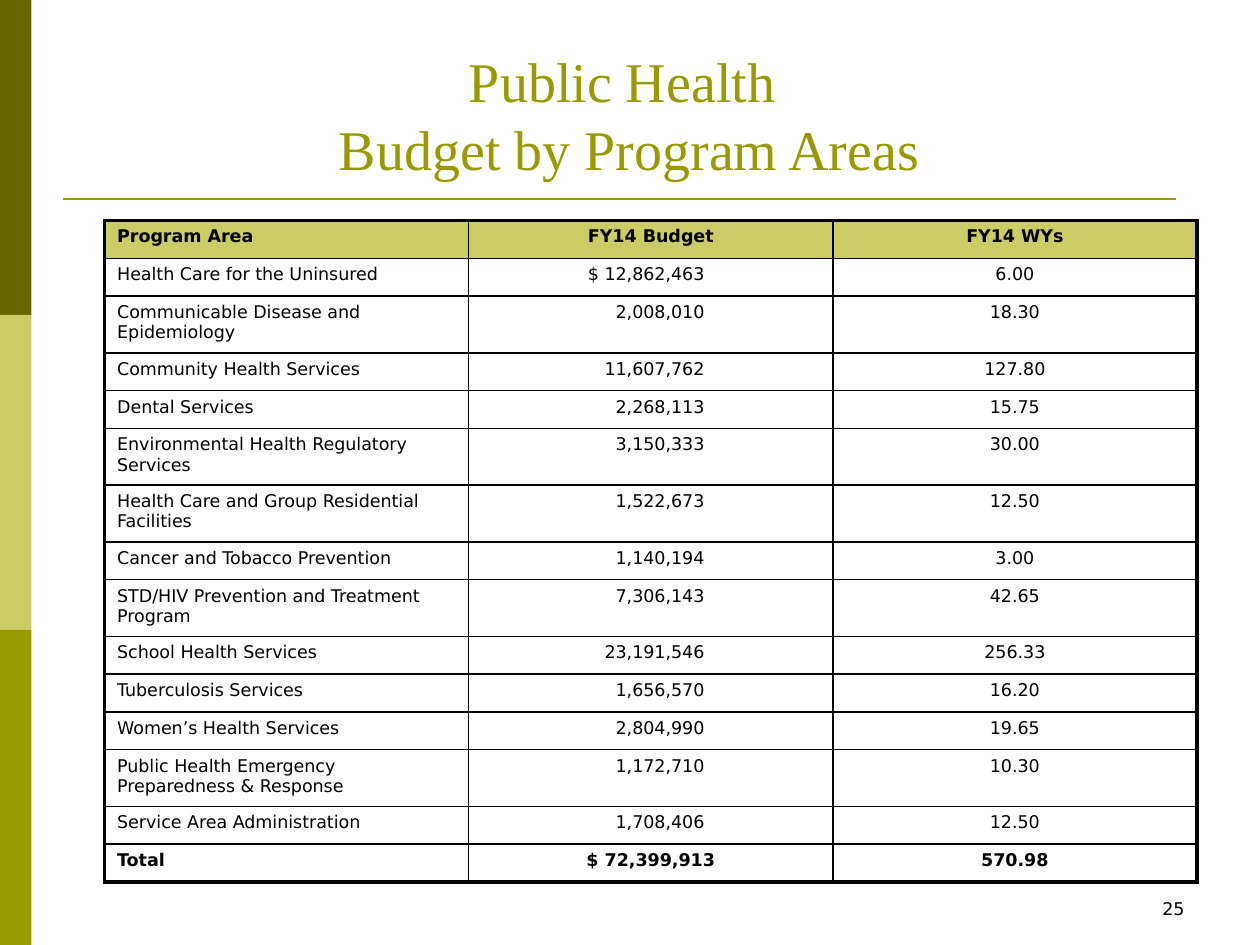
"""Build the Public Health budget by program areas slide."""
from lxml import etree
from pptx import Presentation
from pptx.dml.color import RGBColor
from pptx.enum.shapes import MSO_CONNECTOR, MSO_SHAPE
from pptx.enum.text import MSO_ANCHOR, PP_ALIGN
from pptx.oxml.ns import qn
from pptx.util import Inches, Pt

LEFT, CENTER, RIGHT = PP_ALIGN.LEFT, PP_ALIGN.CENTER, PP_ALIGN.RIGHT
BOTTOM = MSO_ANCHOR.BOTTOM
RECTANGLE, STRAIGHT = MSO_SHAPE.RECTANGLE, MSO_CONNECTOR.STRAIGHT

THEME = {
    "olive": "999900", "dark": "666600", "light": "CCCC66", "ink": "000000",
    "title_font": "Times New Roman", "body_font": "DejaVu Sans",
    "title_size": 32, "body_size": 10, "outer": 2.25, "inner": 1, "rule": 1.5,
}
TITLE = "Public Health \vBudget by Program Areas"
PAGE_NUMBER = "25"
ROWS = [
    ("Program Area", "FY14 Budget", "FY14 WYs"),
    ("Health Care for the Uninsured", "$ 12,862,463", "6.00"),
    ("Communicable Disease and Epidemiology", "2,008,010", "18.30"),
    ("Community Health Services", "11,607,762", "127.80"),
    ("Dental Services", "2,268,113", "15.75"),
    ("Environmental Health Regulatory Services", "3,150,333", "30.00"),
    ("Health Care and Group Residential Facilities", "1,522,673", "12.50"),
    ("Cancer and Tobacco Prevention", "1,140,194", "3.00"),
    ("STD/HIV Prevention and Treatment Program", "7,306,143", "42.65"),
    ("School Health Services", "23,191,546", "256.33"),
    ("Tuberculosis Services", "1,656,570", "16.20"),
    ("Women’s Health Services", "2,804,990", "19.65"),
    ("Public Health Emergency Preparedness & Response", "1,172,710", "10.30"),
    ("Service Area Administration", "1,708,406", "12.50"),
    ("Total", "$ 72,399,913", "570.98"),
]
STRIPES = ["dark", "light", "olive"]
STRIPE_WIDTH, STRIPE_HEIGHT = 0.25, 2.5
COLUMN_WIDTH, ROW_HEIGHT, TALL_ROW_HEIGHT = 2.89, 0.3, 0.45
WRAP_LENGTH = 32
BUDGET_MARGIN = 1.02


def color(name):
    return RGBColor.from_string(THEME[name])


def format_text(frame, kind, ink, align, bold=False, space_before=0):
    values = {"name": THEME[kind + "_font"], "size": Pt(THEME[kind + "_size"]), "bold": bold}
    for paragraph in frame.paragraphs:
        paragraph.alignment = align
        paragraph.space_before = Pt(space_before)
        for run in paragraph.runs:
            for key, value in values.items():
                setattr(run.font, key, value)
            run.font.color.rgb = color(ink)


def place(shape, left, top, width, height):
    for key, value in zip(("left", "top", "width", "height"), (left, top, width, height)):
        setattr(shape, key, Inches(value))


def add_border(cell, side, width):
    properties = cell._tc.get_or_add_tcPr()
    line = etree.SubElement(properties, qn("a:ln" + side), w=str(Pt(width)))
    fill = etree.SubElement(line, qn("a:solidFill"))
    etree.SubElement(fill, qn("a:srgbClr"), val=THEME["ink"])


def add_decoration(slide):
    for index, name in enumerate(STRIPES):
        stripe = slide.shapes.add_shape(
            RECTANGLE, 0, Inches(index * STRIPE_HEIGHT), Inches(STRIPE_WIDTH), Inches(STRIPE_HEIGHT))
        stripe.shadow.inherit = False
        stripe.fill.solid()
        stripe.fill.fore_color.rgb = color(name)
        stripe.line.fill.background()
    rule = slide.shapes.add_connector(STRAIGHT, Inches(0.5), Inches(1.58), Inches(9.33), Inches(1.58))
    rule.line.color.rgb = color("olive")
    rule.line.width = Pt(THEME["rule"])
    etree.SubElement(rule._element.spPr, qn("a:effectLst"))


def add_title(slide):
    title = slide.shapes.title
    place(title, 1.08, 0.34, 7.83, 1.15)
    title.text_frame.text = TITLE
    title.text_frame.vertical_anchor = BOTTOM
    format_text(title.text_frame, "title", "olive", CENTER)


def add_page_number(slide):
    box = slide.shapes.add_textbox(Inches(7.17), Inches(7.08), Inches(2.33), Inches(0.25))
    box.text_frame.word_wrap = True
    box.text_frame.text = PAGE_NUMBER
    format_text(box.text_frame, "body", "ink", RIGHT)


def add_budget_table(slide):
    heights = [TALL_ROW_HEIGHT if len(row[0]) > WRAP_LENGTH else ROW_HEIGHT for row in ROWS]
    columns, last_row = len(ROWS[0]), len(ROWS) - 1
    table = slide.shapes.add_table(
        len(ROWS), columns, Inches(0.83), Inches(1.75),
        Inches(columns * COLUMN_WIDTH), Inches(sum(heights))).table
    table.first_row = table.horz_banding = False
    for column in table.columns:
        column.width = Inches(COLUMN_WIDTH)
    for row_index, (values, height) in enumerate(zip(ROWS, heights)):
        table.rows[row_index].height = Inches(height)
        emphasized = row_index in (0, last_row)
        for column_index, text in enumerate(values):
            cell = table.cell(row_index, column_index)
            cell.text = text
            align = LEFT if column_index == 0 else CENTER
            if column_index == 1 and not emphasized:
                align = RIGHT
                cell.margin_right = Inches(BUDGET_MARGIN)
            format_text(cell.text_frame, "body", "ink", align, emphasized, 2)
            outer_sides = {"L": column_index == 0, "R": column_index == columns - 1,
                           "T": row_index == 0, "B": row_index == last_row}
            for side, is_outer in outer_sides.items():
                add_border(cell, side, THEME["outer" if is_outer else "inner"])
            if row_index == 0:
                cell.fill.solid()
                cell.fill.fore_color.rgb = color("light")
            else:
                cell.fill.background()


def main():
    presentation = Presentation()
    presentation.slide_width, presentation.slide_height = Inches(10), Inches(7.5)
    slide = presentation.slides.add_slide(presentation.slide_layouts[5])
    add_decoration(slide)
    add_title(slide)
    add_page_number(slide)
    add_budget_table(slide)
    presentation.save("out.pptx")


if __name__ == "__main__":
    main()
